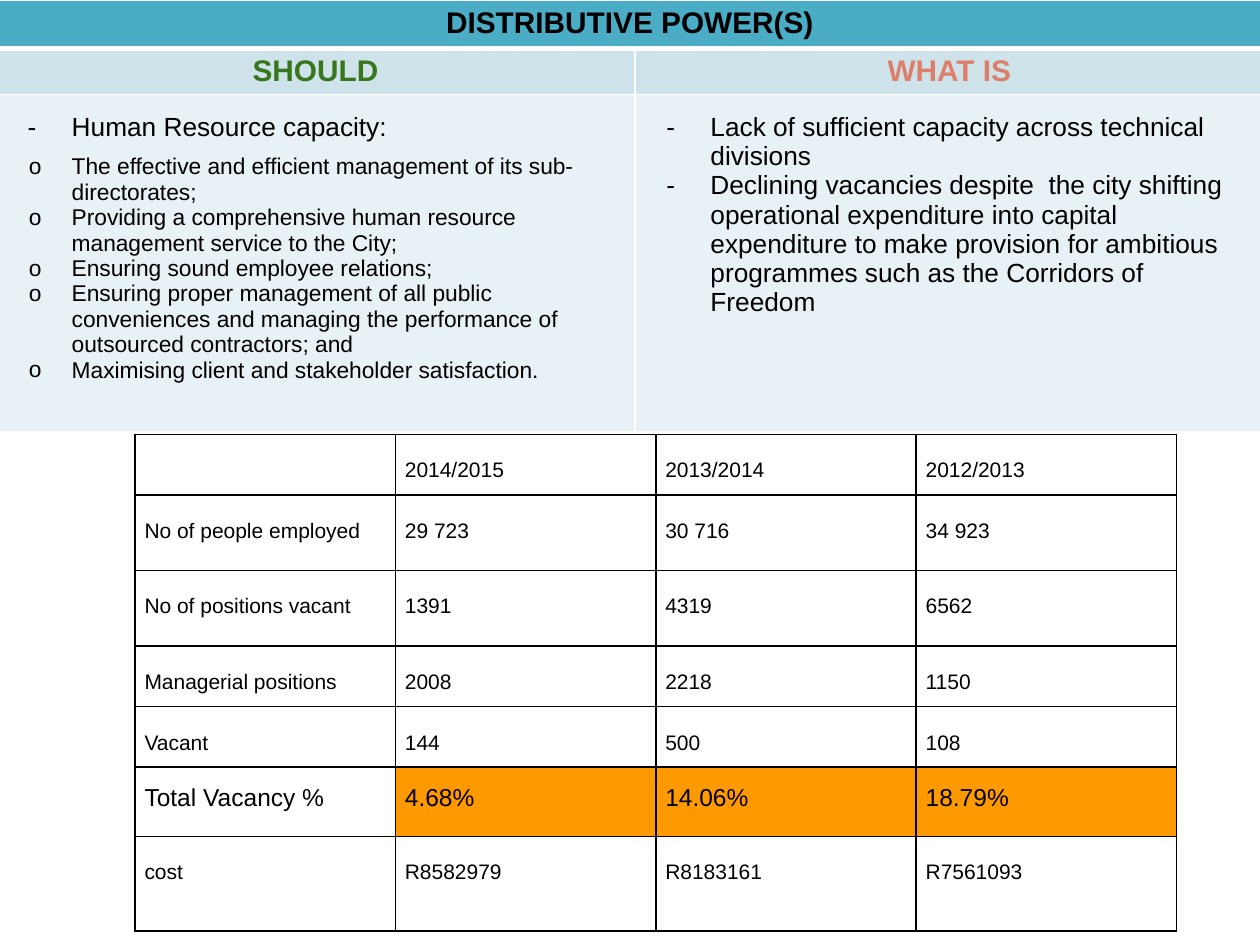
"""Build the distributive powers slide: a comparison above a staffing table."""
from dataclasses import dataclass

from lxml.etree import SubElement as Sub
from pptx import Presentation as Deck
from pptx.dml.color import RGBColor as Rgb
from pptx.enum.text import PP_ALIGN as Align
from pptx.oxml.ns import qn
from pptx.util import Pt


@dataclass(frozen=True)
class Theme:
    font: str = "Arial"
    ink: str = "000000"
    white: str = "FFFFFF"
    teal: str = "4BACC6"
    band: str = "CEE2EA"
    pale: str = "E8F1F5"
    green: str = "38761D"
    coral: str = "DD7E6B"
    gold: str = "FF9900"
    head: int = 17
    lead: int = 15
    total: int = 14
    item: int = 13
    data: int = 12


THEME = Theme()

DUTIES = (
    "The effective and efficient management of its sub-directorates;",
    "Providing a comprehensive human resource management service to the City;",
    "Ensuring sound employee relations;",
    "Ensuring proper management of all public conveniences and managing "
    "the performance of outsourced contractors; and",
    "Maximising client and stakeholder satisfaction.",
)
GAPS = (
    "Lack of sufficient capacity across technical divisions",
    "Declining vacancies despite  the city shifting operational expenditure "
    "into capital expenditure to make provision for ambitious programmes "
    "such as the Corridors of Freedom",
)
STAFF = (
    ("", "2014/2015", "2013/2014", "2012/2013"),
    ("No of people employed", "29 723", "30 716", "34 923"),
    ("No of positions vacant", "1391", "4319", "6562"),
    ("Managerial positions", "2008", "2218", "1150"),
    ("Vacant", "144", "500", "108"),
    ("Total Vacancy %", "4.68%", "14.06%", "18.79%"),
    ("cost", "R8582979", "R8183161", "R7561093"),
)
TOTAL = 5


def add_grid(slide, left, top, cols, rows):
    frame = slide.shapes.add_table(
        len(rows), len(cols), Pt(left), Pt(top), Pt(sum(cols)), Pt(sum(rows)))
    grid = frame.table
    grid.first_row = grid.horz_banding = False
    for col, width in zip(grid.columns, cols):
        col.width = Pt(width)
    for row, height in zip(grid.rows, rows):
        row.height = Pt(height)
    return grid


def set_cell(cell, fill, line, pad, top=1, bottom=1):
    cell.margin_left = cell.margin_right = Pt(pad[0])
    cell.margin_top, cell.margin_bottom = Pt(pad[1]), Pt(pad[2])
    props = cell._tc.get_or_add_tcPr()
    for side, width in zip("LRTB", (1, 1, top, bottom)):
        edge = Sub(props, qn(f"a:ln{side}"), w=str(Pt(width)))
        Sub(Sub(edge, qn("a:solidFill")), qn("a:srgbClr"), val=line)
    if fill:
        cell.fill.solid()
        cell.fill.fore_color.rgb = Rgb.from_string(fill)
    else:
        cell.fill.background()


def set_font(para, size, color=THEME.ink, bold=False):
    font = para.font
    font.name, font.size, font.bold = THEME.font, Pt(size), bold
    font.color.rgb = Rgb.from_string(color)


def set_bullet(para, mark, hang):
    props = para._p.get_or_add_pPr()
    props.set("marL", str(Pt(36)))
    props.set("indent", str(Pt(-hang)))
    Sub(Sub(props, qn("a:buClr")), qn("a:srgbClr"), val=THEME.ink)
    Sub(props, qn("a:buFont"), typeface=THEME.font)
    Sub(props, qn("a:buChar"), char=mark)


def add_head(cell, text, fill, color, top=1, bottom=1):
    set_cell(cell, fill, THEME.white, (7.2, 3.6, 3.6), top, bottom)
    para = cell.text_frame.paragraphs[0]
    para.text, para.alignment = text, Align.CENTER
    set_font(para, THEME.head, color, True)


def add_list(cell, leads, items=()):
    set_cell(cell, THEME.pale, THEME.white, (7.2, 10.5, 3.6))
    frame = cell.text_frame
    lines = [(text, "-", 25.2, THEME.lead) for text in leads]
    lines += [(text, "o", 24.5, THEME.item) for text in items]
    for num, (text, mark, hang, size) in enumerate(lines):
        para = frame.add_paragraph() if num else frame.paragraphs[0]
        para.text = text
        if items and num == len(leads):
            para.space_before = Pt(7)
        set_bullet(para, mark, hang)
        set_font(para, size)


def add_powers(slide):
    grid = add_grid(slide, -2.2, 0, (365, 359.4), (27.6, 26.4, 193))
    grid.cell(0, 0).merge(grid.cell(0, 1))
    add_head(grid.cell(0, 0), "DISTRIBUTIVE POWER(S)", THEME.teal, THEME.ink,
             bottom=3)
    add_head(grid.cell(1, 0), "SHOULD", THEME.band, THEME.green, top=3)
    add_head(grid.cell(1, 1), "WHAT IS", THEME.band, THEME.coral, top=3)
    add_list(grid.cell(2, 0), ("Human Resource capacity:",), DUTIES)
    add_list(grid.cell(2, 1), GAPS)


def add_staff(slide):
    rows = (34.6, 43.2, 43.2, 34.6, 34.6, 39.6, 54)
    grid = add_grid(slide, 77.2, 248.2, (148.8,) * 4, rows)
    for row, texts in enumerate(STAFF):
        total = row == TOTAL
        for col, text in enumerate(texts):
            cell = grid.cell(row, col)
            fill = THEME.gold if total and col else None
            set_cell(cell, fill, THEME.ink, (5.4, 7.2, 7.2))
            para = cell.text_frame.paragraphs[0]
            para.text = text
            para.line_spacing = 1.15 if total else 1.5
            set_font(para, THEME.total if total else THEME.data)


def main():
    deck = Deck()
    deck.slide_width, deck.slide_height = Pt(720), Pt(540)
    slide = deck.slides.add_slide(deck.slide_layouts[6])
    add_powers(slide)
    add_staff(slide)
    deck.save("out.pptx")


if __name__ == "__main__":
    main()
